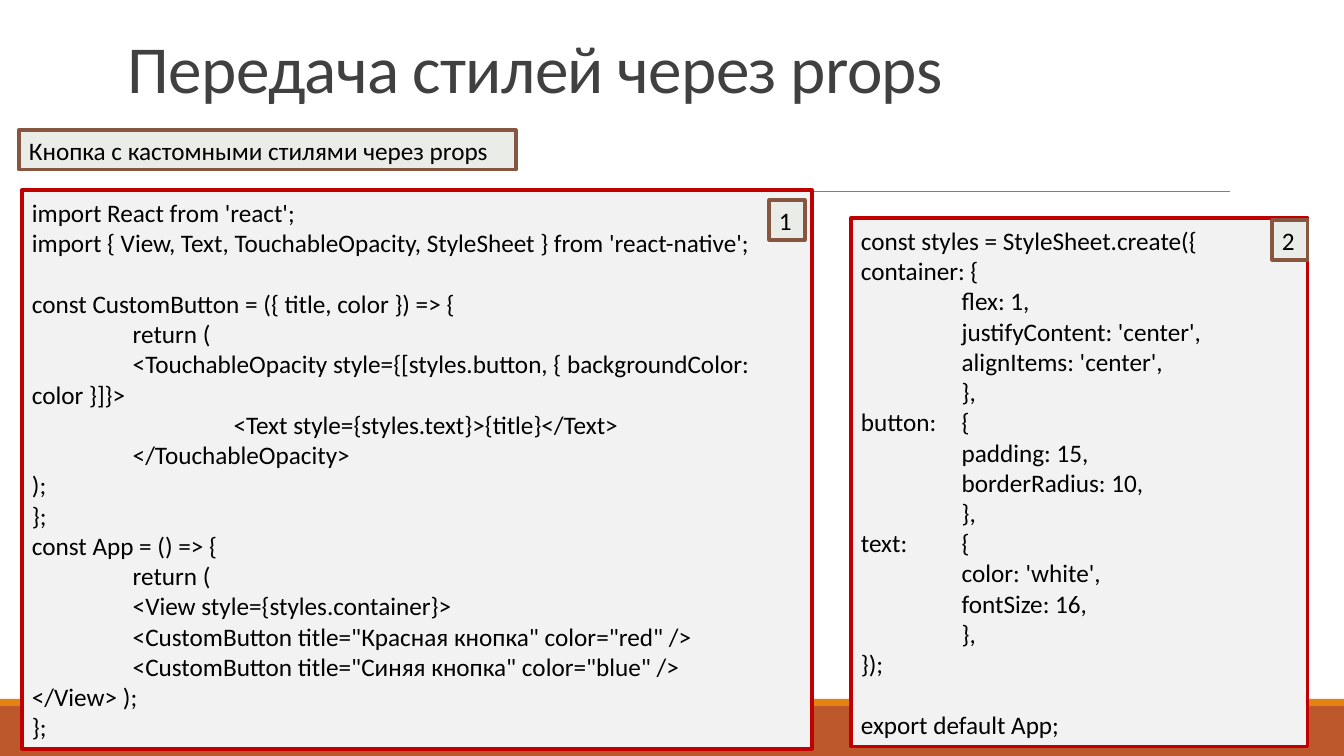
from dataclasses import dataclass

from lxml import etree
from pptx import Presentation
from pptx import util as u
from pptx.dml.color import RGBColor
from pptx.enum import shapes, text
from pptx.oxml.ns import qn

EMU_PER_PX = 914400 / 100.8


@dataclass(frozen=True)
class Theme:
    font: str = "Calibri"
    title_size: int = 48
    body_size: int = 18
    blank_line: int = 22
    border: float = 2.25
    hairline: float = 0.5
    title: str = "404040"
    ink: str = "000000"
    band: str = "BD582C"
    stripe: str = "E48312"
    rule: str = "808080"
    code_fill: str = "F2F2F2"
    code_line: str = "C00000"
    label_fill: str = "EAECE7"
    label_line: str = "865640"


THEME = Theme()

BUTTON_CODE = """import React from 'react';
import { View, Text, TouchableOpacity, StyleSheet } from 'react-native';

const CustomButton = ({ title, color }) => {
\treturn (
\t<TouchableOpacity style={[styles.button, { backgroundColor: color }]}>
\t\t<Text style={styles.text}>{title}</Text>
\t</TouchableOpacity>
);
};
const App = () => {
\treturn (
\t<View style={styles.container}>
\t<CustomButton title="Красная кнопка" color="red" />
\t<CustomButton title="Синяя кнопка" color="blue" />
</View> );
};"""

STYLES_CODE = """const styles = StyleSheet.create({
container: {
\tflex: 1,
\tjustifyContent: 'center',
\talignItems: 'center',
\t},
button: \t{
\tpadding: 15,
\tborderRadius: 10,
\t},
text: \t{
\tcolor: 'white',
\tfontSize: 16,
\t},
});

export default App;"""


def px(value):
    return u.Emu(round(value * EMU_PER_PX))


def rgb(code):
    return RGBColor.from_string(code)


def add_tabs(para, count):
    stops = etree.SubElement(para._p.get_or_add_pPr(), qn("a:tabLst"))
    for inch in range(1, count + 1):
        etree.SubElement(stops, qn("a:tab"), pos=str(u.Inches(inch)), algn="l")


def write(shape, content, size=THEME.body_size, color=THEME.ink,
          anchor=text.MSO_ANCHOR.TOP, line_spacing=None, tracking=None, tabs=0):
    frame = shape.text_frame
    frame.word_wrap = True
    frame.vertical_anchor = anchor
    para = frame.paragraphs[0]
    gap = 0
    for index, line in enumerate(content.split("\n")):
        if not line:
            gap += THEME.blank_line
            continue
        if index:
            para = frame.add_paragraph()
        if tabs:
            add_tabs(para, tabs)
        para.alignment = text.PP_ALIGN.LEFT
        if gap:
            para.space_before = u.Pt(gap)
            gap = 0
        if line_spacing:
            para.line_spacing = line_spacing
        span = para.add_run()
        span.text = line
        span.font.name = THEME.font
        span.font.size = u.Pt(size)
        span.font.color.rgb = rgb(color)
        if tracking is not None:
            span.font._element.set("spc", str(tracking))


def add_panel(page, box, fill, line=None):
    panel = page.shapes.add_shape(shapes.MSO_SHAPE.RECTANGLE, *map(px, box))
    panel.shadow.inherit = False
    panel.fill.solid()
    panel.fill.fore_color.rgb = rgb(fill)
    if line:
        panel.line.color.rgb = rgb(line)
        panel.line.width = u.Pt(THEME.border)
    else:
        panel.line.fill.background()
    return panel


def add_footer(page, box):
    left, top, width, height = box
    stripe = 7
    add_panel(page, (left, top + stripe, width, height - stripe), THEME.band)
    add_panel(page, (left, top, width, stripe), THEME.stripe)


def add_rule(page, left, top, width):
    rule = page.shapes.add_connector(
        shapes.MSO_CONNECTOR.STRAIGHT, px(left), px(top), px(left + width), px(top))
    rule.line.color.rgb = rgb(THEME.rule)
    rule.line.width = u.Pt(THEME.hairline)
    etree.SubElement(rule._element.spPr, qn("a:effectLst"))


def add_title(page, box, content):
    title = page.shapes.add_textbox(*map(px, box))
    write(title, content, size=THEME.title_size, color=THEME.title,
          anchor=text.MSO_ANCHOR.BOTTOM, line_spacing=0.85, tracking=-50)


def add_label(page, box, content):
    label = add_panel(page, box, THEME.label_fill, THEME.label_line)
    write(label, content)


def add_code(page, box, code, number, inset_right, inset_top):
    left, top, width, height = box
    panel = add_panel(page, box, THEME.code_fill, THEME.code_line)
    write(panel, code, anchor=text.MSO_ANCHOR.MIDDLE, tabs=2)
    badge = 36
    add_label(page, (left + width - inset_right - badge, top + inset_top, badge, 40),
              number)


def build_slide(deck):
    page = deck.slides.add_slide(deck.slide_layouts[6])
    add_footer(page, (0, 699, 1344, 57))
    add_rule(page, 132, 191, 1098)
    add_title(page, (118, 20, 1109, 92), "Передача стилей через props")
    add_label(page, (19, 130, 497, 40), "Кнопка с кастомными стилями через props")
    add_code(page, (22, 190, 790, 559), BUTTON_CODE, "1", 7, 10)
    add_code(page, (851, 218, 457, 529), STYLES_CODE, "2", 0, 2)


def main():
    deck = Presentation()
    deck.slide_width = px(1344)
    deck.slide_height = px(756)
    build_slide(deck)
    deck.save("out.pptx")


if __name__ == "__main__":
    main()
